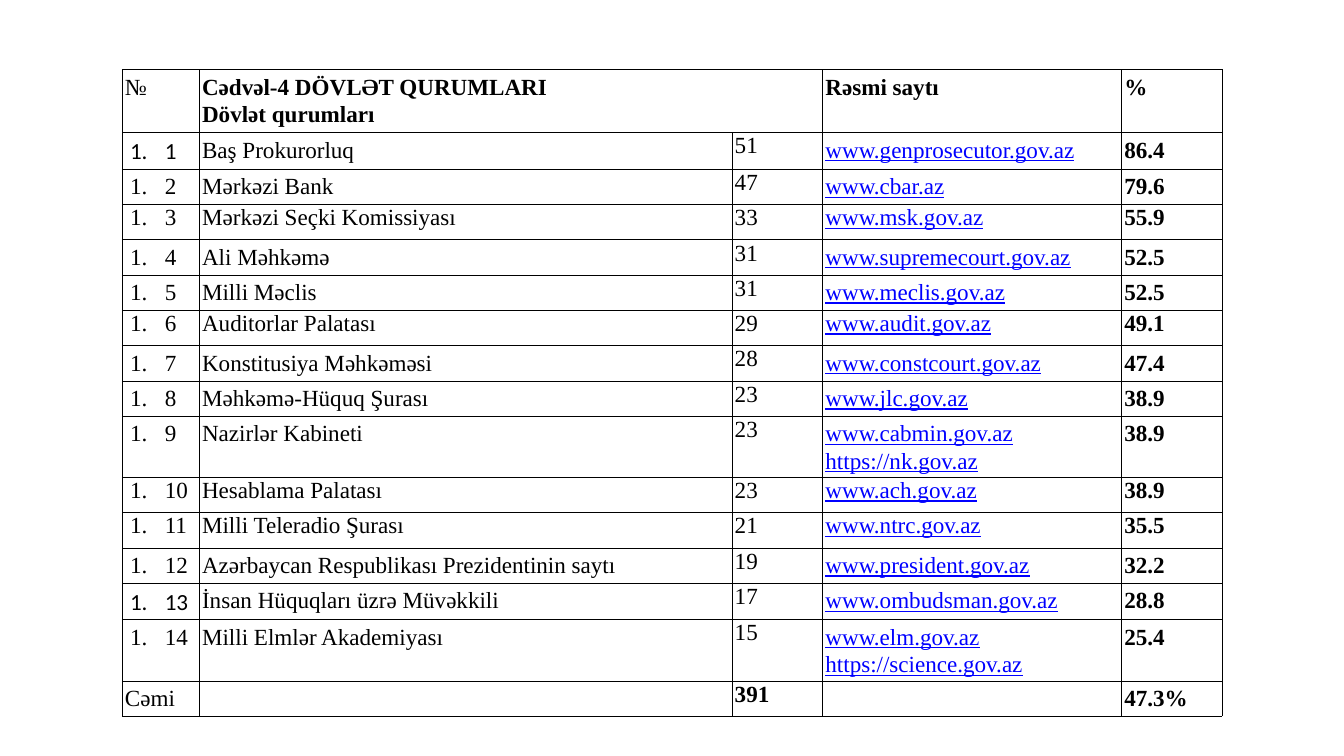
from lxml import etree
from pptx import Presentation
from pptx.dml.color import RGBColor
from pptx.oxml.ns import qn
from pptx.util import Inches, Pt

HEADER = ["№", "Cədvəl-4 DÖVLƏT QURUMLARI\nDövlət qurumları", "", "Rəsmi saytı", "%"]
INSTITUTIONS = [  # name, points, sites, percent
    ("Baş Prokurorluq", 51, "www.genprosecutor.gov.az", "86.4"),
    ("Mərkəzi Bank", 47, "www.cbar.az", "79.6"),
    ("Mərkəzi Seçki Komissiyası", 33, "www.msk.gov.az", "55.9"),
    ("Ali Məhkəmə", 31, "www.supremecourt.gov.az", "52.5"),
    ("Milli Məclis", 31, "www.meclis.gov.az", "52.5"),
    ("Auditorlar Palatası", 29, "www.audit.gov.az", "49.1"),
    ("Konstitusiya Məhkəməsi", 28, "www.constcourt.gov.az", "47.4"),
    ("Məhkəmə-Hüquq Şurası", 23, "www.jlc.gov.az", "38.9"),
    ("Nazirlər Kabineti", 23, "www.cabmin.gov.az\nhttps://nk.gov.az", "38.9"),
    ("Hesablama Palatası", 23, "www.ach.gov.az", "38.9"),
    ("Milli Teleradio Şurası", 21, "www.ntrc.gov.az", "35.5"),
    ("Azərbaycan Respublikası Prezidentinin saytı", 19, "www.president.gov.az", "32.2"),
    ("İnsan Hüquqları üzrə Müvəkkili", 17, "www.ombudsman.gov.az", "28.8"),
    ("Milli Elmlər Akademiyası", 15, "www.elm.gov.az\nhttps://science.gov.az", "25.4"),
]
TOTAL = ["Cəmi", "", "391", "", "47.3%"]

NUMBER, NAME, POINTS, SITE, PERCENT = range(5)
COLUMN_WIDTHS = [1.53, 10.57, 1.8, 5.93, 2]
HEADER_HEIGHT, ROW_HEIGHT, TWO_SITE_HEIGHT = 1.25, 0.7, 1.19
TIGHT_ROWS = {3, 6, 10, 11}
CALIBRI_NUMBERS = {1, 13}
LOOSE, TIGHT = 1.08, 0.9
COLORS = {"text": "000000", "link": "0000FF", "border": "000000"}


def draw_borders(cell):
    properties = cell._tc.get_or_add_tcPr()
    for side in ("lnL", "lnR", "lnT", "lnB"):
        line = etree.SubElement(properties, qn(f"a:{side}"), w=str(Pt(0.5)))
        fill = etree.SubElement(line, qn("a:solidFill"))
        etree.SubElement(fill, qn("a:srgbClr"), val=COLORS["border"])


def number_paragraph(paragraph):
    """Give the paragraph an automatic "1." and a hanging indent."""
    properties = paragraph._p.get_or_add_pPr()
    properties.set("marL", str(Inches(0.79)))
    properties.set("indent", str(Inches(-0.69)))
    etree.SubElement(properties, qn("a:buAutoNum"), type="arabicPeriod")


def fill_cell(cell, content, spacing, bold=False, link=False, font="Times New Roman"):
    draw_borders(cell)
    cell.fill.background()
    cell.margin_left = cell.margin_right = Inches(0.06)
    cell.margin_top = cell.margin_bottom = Inches(0.06)
    cell.text = content
    for paragraph in cell.text_frame.paragraphs:
        paragraph.line_spacing = spacing
        paragraph.font.name = font
        paragraph.font.size = Pt(33)
        paragraph.font.bold = bold
        paragraph.font.underline = link
        paragraph.font.color.rgb = RGBColor.from_string(COLORS["link" if link else "text"])


def main():
    deck = Presentation()
    deck.slide_width, deck.slide_height = Inches(26.67), Inches(15)
    slide = deck.slides.add_slide(deck.slide_layouts[6])

    body = [[str(n), name, str(points), sites, percent]
            for n, (name, points, sites, percent) in enumerate(INSTITUTIONS, 1)]
    rows = [HEADER, *body, TOTAL]
    heights = [HEADER_HEIGHT] + [TWO_SITE_HEIGHT if "\n" in row[SITE] else ROW_HEIGHT
                                 for row in rows[1:]]

    table = slide.shapes.add_table(
        len(rows), len(COLUMN_WIDTHS), Inches(2.42), Inches(1.38),
        Inches(sum(COLUMN_WIDTHS)), Inches(sum(heights))).table
    table.first_row = table.horz_banding = False
    for column, width in zip(table.columns, COLUMN_WIDTHS):
        column.width = Inches(width)

    last = len(rows) - 1
    for r, (row, height) in enumerate(zip(rows, heights)):
        table.rows[r].height = Inches(height)
        in_body = 0 < r < last
        for c, content in enumerate(row):
            cell = table.cell(r, c)
            numbered = in_body and c == NUMBER
            fill_cell(
                cell, content,
                spacing=TIGHT if r in TIGHT_ROWS or (c == POINTS and r > 0) else LOOSE,
                bold=c == PERCENT or (not in_body and c != NUMBER),
                link=in_body and c == SITE,
                font="Calibri" if numbered and r in CALIBRI_NUMBERS else "Times New Roman")
            if numbered:
                number_paragraph(cell.text_frame.paragraphs[0])

    table.cell(0, NUMBER).text_frame.paragraphs[0].space_before = Pt(8)
    table.cell(0, NAME).merge(table.cell(0, POINTS))
    deck.save("out.pptx")


if __name__ == "__main__":
    main()
